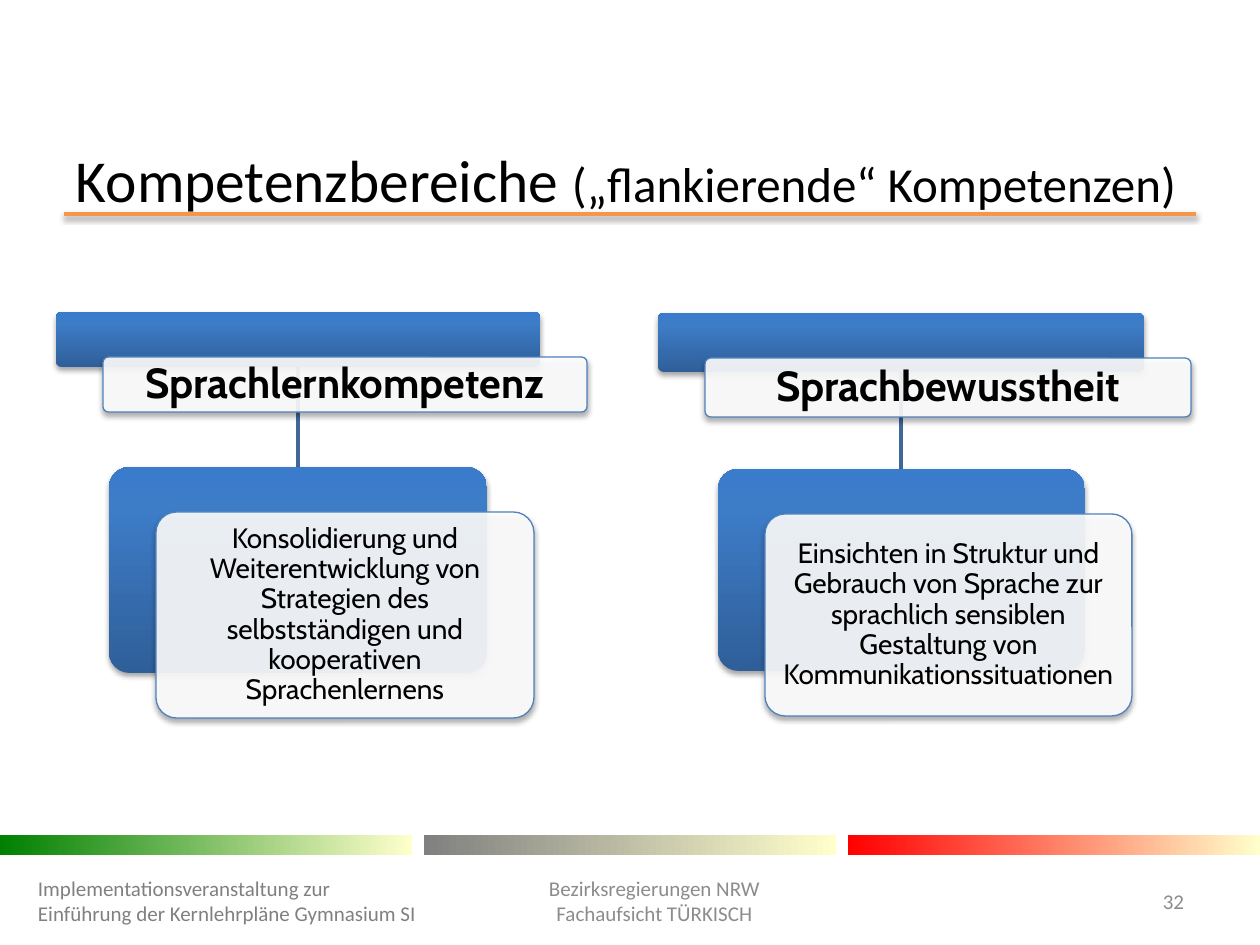
from pptx import Presentation
from pptx.dml.color import RGBColor
from pptx.enum.shapes import MSO_CONNECTOR, MSO_SHAPE
from pptx.enum.text import MSO_ANCHOR, PP_ALIGN
from pptx.oxml.ns import qn
from pptx.util import Pt
from lxml.etree import SubElement

EMU_PER_PX = 914400 / 126
CARD_GRADIENT = [(0, "2F5F99"), (80, "3D7CC7"), (100, "3A7CCB")]
FOOTER_GREY = "8C8C8C"
LEFT, CENTER, RIGHT = PP_ALIGN.LEFT, PP_ALIGN.CENTER, PP_ALIGN.RIGHT


def px(length):
    return round(length * EMU_PER_PX)


def rgb(color):
    return RGBColor.from_string(color)


def add_color(parent, color, alpha):
    node = SubElement(parent, qn("a:srgbClr"), val=color)
    if alpha < 100:
        SubElement(node, qn("a:alpha"), val=str(alpha * 1000))


def add_shadow(effects, alpha):
    shadow = SubElement(effects, qn("a:outerShdw"), blurRad=str(Pt(3.1)),
                        dist=str(Pt(1.8)), dir="5400000", rotWithShape="0")
    add_color(shadow, "000000", alpha)


class SlideBuilder:
    """Holds the slide and the style shared by its elements."""

    heading_font = "Calibri"
    card_font = "Cabin"
    card_offset = (47, 45)

    def __init__(self, slide):
        self.slide = slide

    def line(self, start, end, color, shadow=0):
        connector = self.slide.shapes.add_connector(
            MSO_CONNECTOR.STRAIGHT, *map(px, start + end))
        connector.line.color.rgb = rgb(color)
        connector.line.width = Pt(2)
        effects = SubElement(connector._element.spPr, qn("a:effectLst"))
        if shadow:
            add_shadow(effects, shadow)

    def shape(self, kind, box, shadow=0):
        shape = self.slide.shapes.add_shape(kind, *map(px, box))
        shape.shadow.inherit = False
        shape.line.fill.background()
        if shadow:
            add_shadow(shape._element.spPr.find(qn("a:effectLst")), shadow)
        return shape

    def gradient(self, shape, stops, angle):
        """Fill with (percent, colour) stops; angle runs counter-clockwise."""
        shape.fill.gradient()
        shape.fill.gradient_angle = angle
        stop_list = shape._element.spPr.find(qn("a:gradFill")).find(qn("a:gsLst"))
        stop_list.clear()
        for percent, color in stops:
            stop = SubElement(stop_list, qn("a:gs"), pos=str(percent * 1000))
            add_color(stop, color, 100)

    def bar(self, box, color):
        self.gradient(self.shape(MSO_SHAPE.RECTANGLE, box),
                      [(0, color), (100, "FFFFCC")], 0)

    def text(self, box, paragraphs, font, color, align, insets=(13, 6),
             spacing=1.0, bold=False):
        """Each paragraph is a list of (text, size) runs."""
        frame = self.slide.shapes.add_textbox(*map(px, box)).text_frame
        frame.word_wrap = True
        frame.vertical_anchor = MSO_ANCHOR.MIDDLE
        frame.margin_left = frame.margin_right = px(insets[0])
        frame.margin_top = frame.margin_bottom = px(insets[1])
        for index, runs in enumerate(paragraphs):
            paragraph = frame.add_paragraph() if index else frame.paragraphs[0]
            paragraph.alignment = align
            paragraph.line_spacing = spacing
            for content, size in runs:
                run = paragraph.add_run()
                run.text = content
                run.font.name = font
                run.font.size = Pt(size)
                run.font.bold = bold
                run.font.color.rgb = rgb(color)

    def card(self, box, runs, edge, inset, bold=False):
        """A blue plate with a translucent, labelled plate offset over it."""
        plate = self.shape(MSO_SHAPE.ROUNDED_RECTANGLE, box, 35)
        plate.adjustments[0] = 0.1
        self.gradient(plate, CARD_GRADIENT, 90)

        left, top, width, height = box
        left += self.card_offset[0]
        top += self.card_offset[1]
        front = self.shape(MSO_SHAPE.ROUNDED_RECTANGLE,
                           (left, top, width, height), 35)
        front.adjustments[0] = 0.1
        front.fill.solid()
        front.fill.fore_color.rgb = rgb("FFFFFF")
        fill_color = front._element.spPr.find(qn("a:solidFill"))[0]
        SubElement(fill_color, qn("a:alpha"), val="90000")
        front.line.color.rgb = rgb("4F81BD")
        front.line.width = Pt(0.75)

        label = (left + edge, top + edge, width - 2 * edge, height - 2 * edge)
        self.text(label, [runs], self.card_font, "000000", CENTER,
                  (inset, inset), 0.9, bold)

    def competence(self, name, head_box, description, body_box):
        left, top, width, height = head_box
        middle = left + width // 2
        self.line((middle, top + height), (middle, body_box[1]), "3F6797")
        self.card(head_box, [(name, 24)], edge=2, inset=13, bold=True)
        self.card(body_box, description, edge=6, inset=9)


def main():
    deck = Presentation()
    deck.slide_width, deck.slide_height = px(1260), px(945)
    builder = SlideBuilder(deck.slides.add_slide(deck.slide_layouts[6]))

    builder.line((64, 214), (1196, 214), "F79646", shadow=38)
    for column, color in enumerate(["008000", "808080", "FF0000"]):
        builder.bar((column * 424, 835, 412, 20), color)

    builder.competence(
        "Sprachlernkompetenz", (56, 312, 484, 55),
        [("Konsolidierung und Weiterentwicklung von Strategien des "
          "selbstständigen und kooperativen Sprachenlernens", 16)],
        (109, 467, 378, 206))
    builder.competence(
        "Sprachbewusstheit", (658, 313, 486, 59),
        [("Einsichten in Struktur und Gebrauch von Sprache zur", 16),
         (" ", 14),
         ("sprachlich sensiblen Gestaltung von Kommunikationssituationen", 16)],
        (718, 469, 367, 202))

    font = builder.heading_font
    builder.text((63, 137, 1134, 84),
                 [[("Kompetenzbereiche ", 34),
                   ("(„flankierende“ Kompetenzen)", 28)]],
                 font, "000000", LEFT)
    builder.text((25, 876, 408, 50),
                 [[("Implementationsveranstaltung zur "
                    "Einführung der Kernlehrpläne Gymnasium SI", 12)]],
                 font, "808080", LEFT)
    builder.text((471, 856, 367, 89),
                 [[("Bezirksregierungen NRW", 12)],
                  [("Fachaufsicht TÜRKISCH", 12)]],
                 font, FOOTER_GREY, CENTER)
    builder.text((1116, 876, 81, 50), [[("32", 12)]], font, FOOTER_GREY, RIGHT)

    deck.save("out.pptx")


if __name__ == "__main__":
    main()
